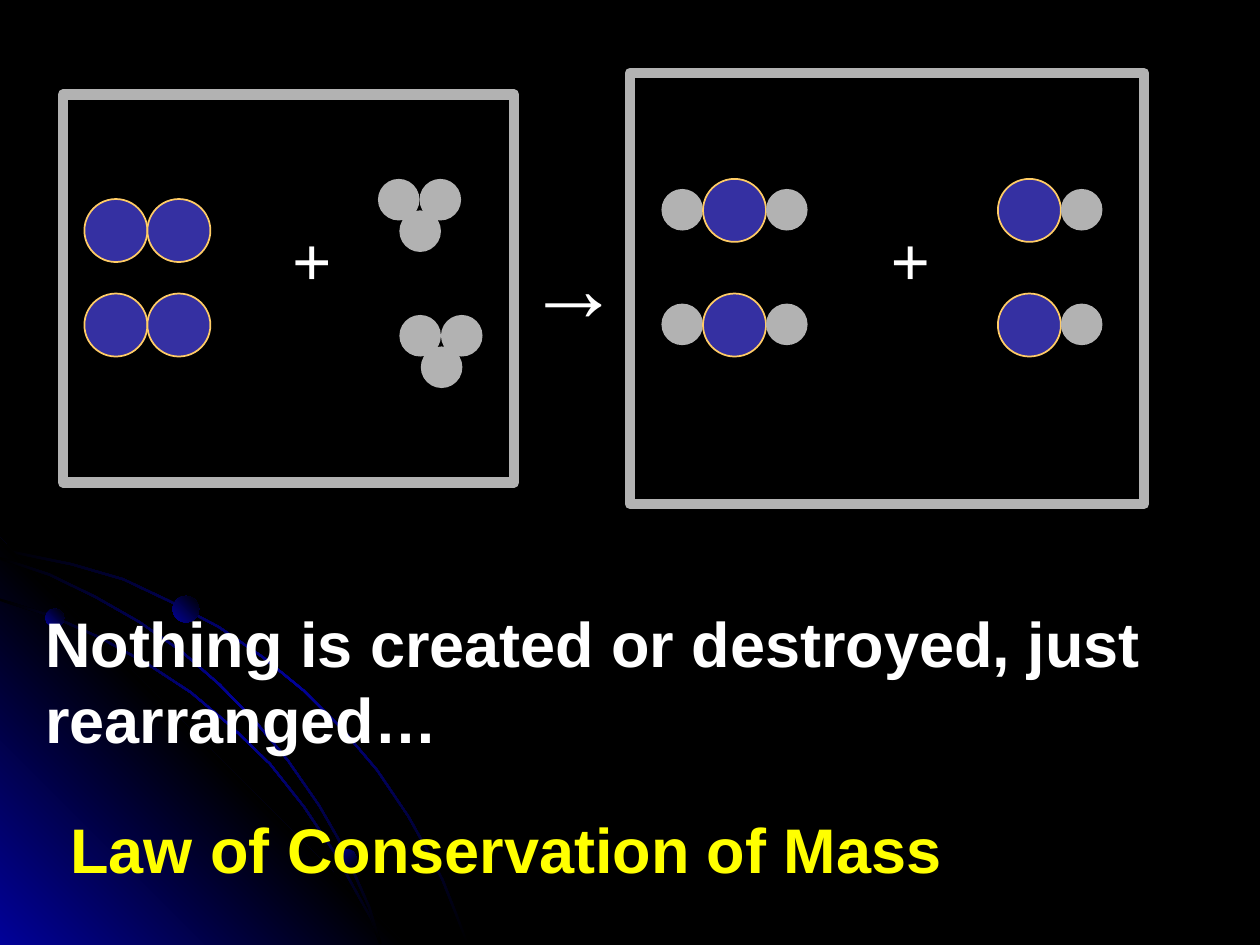
from lxml import etree
from pptx import Presentation
from pptx.dml.color import RGBColor
from pptx.enum.shapes import MSO_SHAPE as Shape
from pptx.enum.text import MSO_ANCHOR as Anchor, PP_ALIGN as Align
from pptx.oxml import parse_xml
from pptx.oxml.ns import nsdecls
from pptx.util import Inches, Pt

HEX = {"black": "000000", "glow": "010199", "blue": "3530A2", "gold": "FFCC66",
       "gray": "B2B2B2", "white": "FFFFFF", "yellow": "FFFF00"}

# Texts: wording, left, top, width, height, font, size, colour
TITLE = ("Law of Conservation of Mass", 0.46, 6.38, 8.45, 0.71, "Arial", 36, "yellow")
TEXTS = [
    (" +", 2.08, 1.67, 0.67, 0.77, "Times New Roman", 40, "white"),
    ("→", 4.08, 1.75, 0.83, 1, "Times New Roman", 54, "white"),
    (" +", 6.83, 1.67, 0.67, 0.77, "Times New Roman", 40, "white"),
    ("Nothing is created or destroyed, just rearranged…",
     0.26, 4.75, 9.17, 1.31, "Arial", 36, "white"),
]

# Boxes around both sides of the reaction
FRAMES = [(0.5, 0.75, 3.58, 3.08), (5, 0.58, 4.08, 3.42)]

# Atom sizes, and molecules as atoms with offsets from the left top corner
SIZE = {"blue": 0.5, "gray": 0.33}
PAIR = [("blue", 0, 0), ("blue", 0.5, 0)]
TRIO = [("gray", 0, 0), ("gray", 0.33, 0), ("gray", 0.17, 0.25)]
CHAIN = [("gray", 0, 0.08), ("blue", 0.33, 0), ("gray", 0.83, 0.08)]
DUO = [("blue", 0, 0), ("gray", 0.5, 0.08)]
PLACES = [
    (PAIR, 0.67, 1.58), (PAIR, 0.67, 2.33),
    (TRIO, 3, 1.42), (TRIO, 3.17, 2.5),
    (CHAIN, 5.25, 1.42), (CHAIN, 5.25, 2.33),
    (DUO, 7.92, 1.42), (DUO, 7.92, 2.33),
]

# Background: outer edges of the orbits, the corner glow and small planets
ARC_WIDTH = 0.02
OUTER = [(0, 4.35), (0.28, 4.41), (0.57, 4.47), (0.98, 4.59), (1.36, 4.77),
         (1.74, 4.97), (2.09, 5.21), (2.42, 5.48), (2.72, 5.78), (3, 6.11),
         (3.25, 6.48), (3.39, 6.73), (3.52, 6.98), (3.62, 7.23), (3.72, 7.49)]
INNER = [(0, 4.75), (0.41, 4.88), (0.79, 5.05), (1.17, 5.26), (1.52, 5.49),
         (1.84, 5.76), (2.15, 6.06), (2.42, 6.4), (2.66, 6.76), (2.86, 7.12),
         (2.96, 7.3), (3.03, 7.49)]
MIDDLE = [(0, 4.42), (0.39, 4.55), (0.76, 4.73), (1.11, 4.93), (1.44, 5.16),
          (1.75, 5.43), (2.04, 5.73), (2.29, 6.03), (2.54, 6.39), (2.69, 6.65),
          (2.82, 6.93), (2.94, 7.2), (3.03, 7.49)]
CORNER = [(3.22, 7.5), (0, 7.5), (0, 4.27)]
PLANETS = [(0.36, 4.83, 0.15, 315), (2.67, 6.74, 0.16, 45), (1.37, 4.73, 0.21, 315)]


def color(name):
    return RGBColor.from_string(HEX[name])


def place(*box):
    return [Inches(v) for v in box]


def shade(shape, names, angle):
    """Fill a shape with evenly spread gradient colours and no line."""
    shape.shadow.inherit = False
    shape.line.fill.background()
    shape.fill.background()
    grad = parse_xml(f'<a:gradFill {nsdecls("a")} rotWithShape="1"><a:gsLst/>'
                     f'<a:lin ang="{angle * 60000}" scaled="1"/></a:gradFill>')
    for i, name in enumerate(names):
        stop = etree.SubElement(grad[0], grad[0].tag.replace("gsLst", "gs"))
        stop.set("pos", str(100000 * i // (len(names) - 1)))
        tone = etree.SubElement(stop, grad[0].tag.replace("gsLst", "srgbClr"))
        tone.set("val", HEX[name])
    props = shape._element.spPr
    props.replace(props.find(grad.tag.replace("gradFill", "noFill")), grad)


def outline(shapes, points):
    pen = shapes.build_freeform(*place(*points[0]), scale=1.0)
    pen.add_line_segments([place(*p) for p in points[1:]], close=True)
    return pen.convert_to_shape()


def arc(shapes, edge):
    last = len(edge) - 1
    back = [(x - ARC_WIDTH * i / last, y + ARC_WIDTH * (1 - i / last))
            for i, (x, y) in enumerate(edge)]
    shade(outline(shapes, edge + back[::-1]), ["black", "glow", "black"], 45)


def atom(shapes, kind, x, y):
    ball = shapes.add_shape(Shape.OVAL, *place(x, y, SIZE[kind], SIZE[kind]))
    ball.shadow.inherit = False
    ball.fill.solid()
    ball.fill.fore_color.rgb = color(kind)
    if kind == "blue":
        ball.line.color.rgb = color("gold")
        ball.line.width = Pt(1)
    else:
        ball.line.fill.background()


def write(shape, text, font, size, tone):
    frame = shape.text_frame
    frame.text = text
    frame.word_wrap = True
    frame.vertical_anchor = Anchor.TOP
    par = frame.paragraphs[0]
    par.alignment = Align.LEFT
    face = par.runs[0].font
    face.name, face.size, face.bold = font, Pt(size), True
    face.color.rgb = color(tone)


def main():
    deck = Presentation()
    deck.slide_width, deck.slide_height = place(10, 7.5)
    slide = deck.slides.add_slide(deck.slide_layouts[5])
    shapes = slide.shapes
    slide.background.fill.solid()
    slide.background.fill.fore_color.rgb = color("black")

    # Background orbits
    arc(shapes, OUTER)
    shade(outline(shapes, CORNER), ["glow", "black", "glow"], 315)
    arc(shapes, INNER)
    arc(shapes, MIDDLE)
    for x, y, size, angle in PLANETS:
        ball = shapes.add_shape(Shape.OVAL, *place(x, y, size, size))
        shade(ball, ["glow", "black"], angle)

    # Molecules
    for atoms, left, top in PLACES:
        for kind, dx, dy in atoms:
            atom(shapes, kind, left + dx, top + dy)

    # Frames
    for box in FRAMES:
        frame = shapes.add_shape(Shape.RECTANGLE, *place(*box))
        frame.shadow.inherit = False
        frame.fill.background()
        frame.line.color.rgb = color("gray")
        frame.line.width = Pt(6)

    # Texts, with the title in front of the orbits
    for text, x, y, w, h, *style in TEXTS:
        write(shapes.add_textbox(*place(x, y, w, h)), text, *style)
    title = shapes.title
    text, x, y, w, h, *style = TITLE
    title.left, title.top, title.width, title.height = place(x, y, w, h)
    write(title, text, *style)
    shapes._spTree.append(title._element)

    deck.save("out.pptx")


if __name__ == "__main__":
    main()
